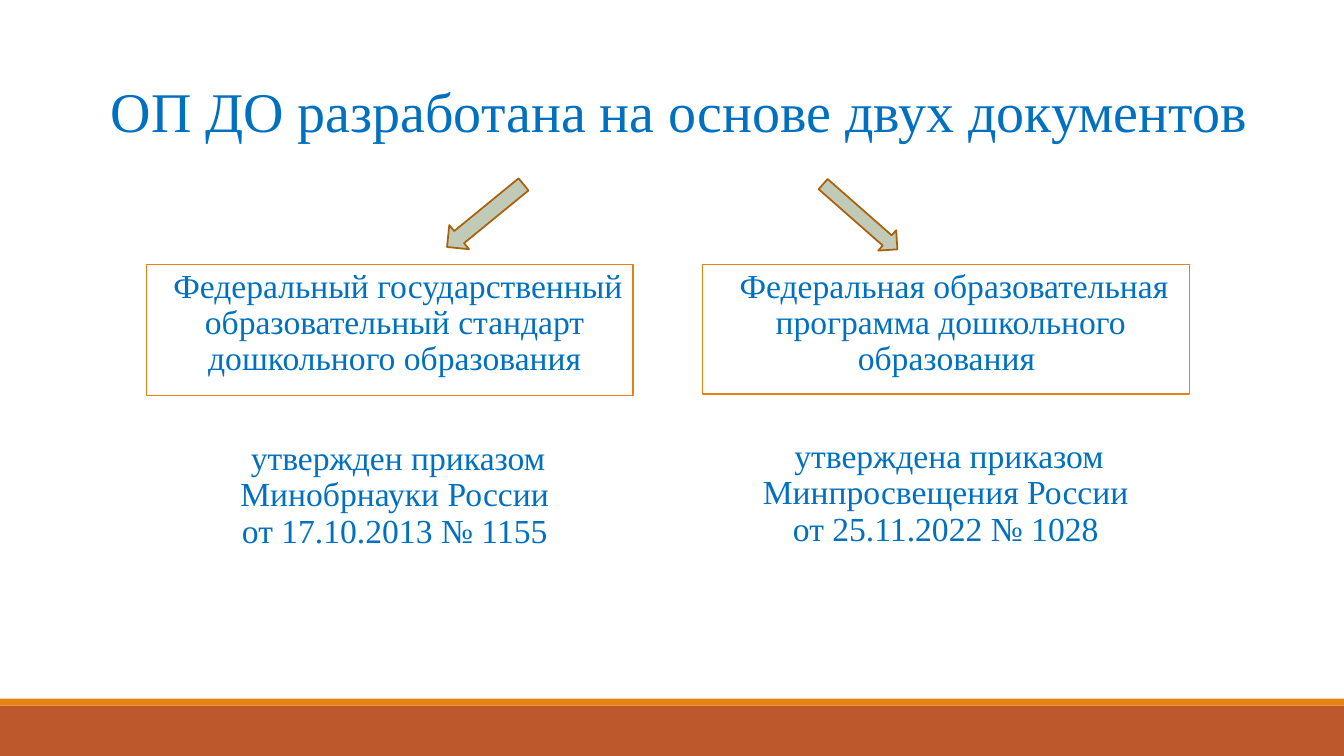
from dataclasses import dataclass

from lxml.etree import SubElement
from pptx import Presentation
from pptx.dml.color import RGBColor
from pptx.enum.shapes import MSO_SHAPE
from pptx.enum.text import MSO_ANCHOR, PP_ALIGN
from pptx.oxml.ns import qn
from pptx.util import Pt


@dataclass(frozen=True)
class Theme:
    font: str = "Times New Roman"
    ink: str = "0070C0"
    band: str = "BD582C"
    accent: str = "E48312"
    arrow: str = "C1CAB6"
    edge: str = "A9610D"
    title: int = 40
    body: int = 24


THEME = Theme()
WIDTH, HEIGHT = 960, 540


def add_form(slide, kind, box, fill=None, line=None, weight=0.75):
    form = slide.shapes.add_shape(kind, *map(Pt, box))
    form.shadow.inherit = False
    if fill:
        form.fill.solid()
        form.fill.fore_color.rgb = RGBColor.from_string(fill)
    else:
        form.fill.background()
    if line:
        form.line.color.rgb = RGBColor.from_string(line)
        form.line.width = Pt(weight)
    else:
        form.line.fill.background()
    return form


def add_run(para, text, size):
    run = para.add_run()
    run.text = text
    run.font.name = THEME.font
    run.font.size = Pt(size)
    run.font.color.rgb = RGBColor.from_string(THEME.ink)


def add_body(shape, lines):
    frame = shape.text_frame
    frame.word_wrap = True
    frame.vertical_anchor = MSO_ANCHOR.TOP
    frame.margin_left = frame.margin_right = 0
    para = frame.paragraphs[0]
    para.alignment = PP_ALIGN.CENTER
    para.line_spacing = 0.9
    para.space_before, para.space_after = Pt(12), Pt(2)
    # Hanging indent with a blank bullet
    props = para._p.get_or_add_pPr()
    props.set("marL", str(Pt(7.2)))
    props.set("indent", str(-Pt(7.2)))
    SubElement(props, qn("a:buChar")).set("char", " ")
    for index, line in enumerate(lines):
        if index:
            para.add_line_break()
        add_run(para, line, THEME.body)


def add_footer(slide, box):
    left, top, width, height = box
    strip = 5
    add_form(slide, MSO_SHAPE.RECTANGLE,
             (left, top + strip, width, height - strip), THEME.band)
    add_form(slide, MSO_SHAPE.RECTANGLE, (left, top, width, strip), THEME.accent)


def add_title(slide, box, text):
    frame = slide.shapes.add_textbox(*map(Pt, box)).text_frame
    frame.word_wrap = True
    add_run(frame.paragraphs[0], text, THEME.title)


def add_column(slide, box, frame_height, name, order, order_width):
    left, top, width, height = box
    # Framed document name
    card = add_form(slide, MSO_SHAPE.RECTANGLE,
                    (left, top, width, frame_height), line=THEME.accent)
    add_body(card, [name])
    # Approval order below, 29 points under the frame
    gap = 29
    note = slide.shapes.add_textbox(
        Pt(left), Pt(top + frame_height + gap), Pt(order_width),
        Pt(height - frame_height - gap))
    add_body(note, order)


def add_arrow(slide, box, angle):
    arrow = add_form(slide, MSO_SHAPE.DOWN_ARROW, box,
                     THEME.arrow, THEME.edge, 1.25)
    arrow.rotation = angle


def main():
    deck = Presentation()
    deck.slide_width, deck.slide_height = Pt(WIDTH), Pt(HEIGHT)
    slide = deck.slides.add_slide(deck.slide_layouts[6])

    add_footer(slide, (0, 499, WIDTH, 41))
    add_title(slide, (72, 51.2, 837.4, 55.4),
              "ОП ДО разработана на основе двух документов")

    # Two source documents
    add_column(slide, (104.4, 188.8, 347.8, 227), 94.1,
               "Федеральный государственный образовательный стандарт "
               "дошкольного образования",
               ["утвержден приказом Минобрнауки России",
                "от 17.10.2013 № 1155"], 347.8)
    add_column(slide, (501.6, 188.8, 347.8, 225.5), 92.7,
               "Федеральная образовательная программа дошкольного образования ",
               ["утверждена приказом Минпросвещения России",
                "от 25.11.2022 № 1028"], 340.6)

    # Arrows from the title to the documents
    add_arrow(slide, (335.5, 118.8, 22.3, 70.6), 50.7)
    add_arrow(slide, (604.8, 119.5, 19.4, 70.6), 311.3)

    deck.save("out.pptx")


if __name__ == "__main__":
    main()
